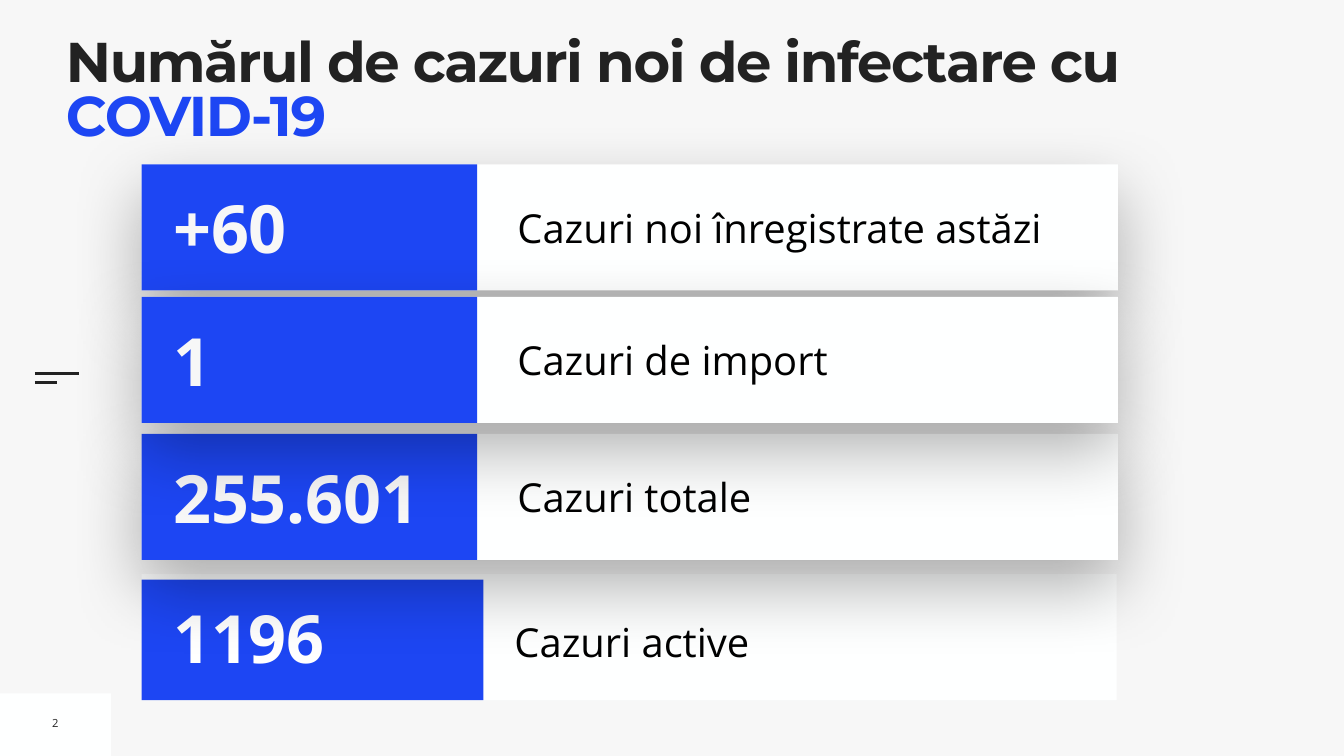
from lxml import etree
from pptx import Presentation
from pptx import util as u
from pptx.dml.color import RGBColor
from pptx.enum import shapes, text
from pptx.oxml import ns

INK = RGBColor(0x22, 0x22, 0x22)
BLACK = RGBColor(0, 0, 0)
BLUE = RGBColor(0x1D, 0x46, 0xF3)
PAPER = RGBColor(0xF7, 0xF7, 0xF7)
CARD = RGBColor(0xFE, 0xFF, 0xFF)
WHITE = RGBColor(0xFF, 0xFF, 0xFF)

LEFT = 10.54
TALL = 16.67


def write(frame, runs, size, font="Open Sans", bold=False, inset=0.1,
          align=None, anchor=text.MSO_ANCHOR.MIDDLE, lead=None,
          before=None, track=None, wrap=True):
    frame.word_wrap = wrap
    frame.vertical_anchor = anchor
    frame.margin_left = frame.margin_right = u.Inches(inset)
    frame.margin_top = frame.margin_bottom = u.Inches(inset)
    para = frame.paragraphs[0]
    para.alignment = align
    para.line_spacing = lead
    para.space_before = before
    for words, color in runs:
        run = para.add_run()
        run.text = words
        run.font.name = font
        run.font.size = u.Pt(size)
        run.font.bold = bold
        run.font.color.rgb = color
        if track:
            run.font._element.set("spc", str(track * 100))


class Deck:
    def __init__(self):
        self.file = Presentation()
        self.file.slide_width = u.Inches(26.67)
        self.file.slide_height = u.Inches(15)
        self.slide = self.file.slides.add_slide(self.file.slide_layouts[6])
        self.slide.background.fill.solid()
        self.slide.background.fill.fore_color.rgb = PAPER
        self.home = self.slide.shapes

    def across(self, share):
        return round(self.file.slide_width * share / 100)

    def down(self, share):
        return round(self.file.slide_height * share / 100)

    def area(self, x, y, wide, high):
        return self.across(x), self.down(y), self.across(wide), self.down(high)

    def box(self, x, y, wide, high, color, shade=False):
        item = self.home.add_shape(shapes.MSO_SHAPE.RECTANGLE,
                                   *self.area(x, y, wide, high))
        item.shadow.inherit = False
        item.fill.solid()
        item.fill.fore_color.rgb = color
        item.line.fill.background()
        if shade:
            self.shade(item)

    def shade(self, item):
        effects = item._element.spPr.find(ns.qn("a:effectLst"))
        cast = etree.SubElement(effects, ns.qn("a:outerShdw"),
                                blurRad=str(u.Pt(100)), dist=str(u.Pt(40)),
                                dir="5400000", algn="t", rotWithShape="0")
        tint = etree.SubElement(cast, ns.qn("a:srgbClr"), val=str(BLACK))
        etree.SubElement(tint, ns.qn("a:alpha"), val="30000")

    def text(self, x, y, wide, high, runs, size, **style):
        item = self.home.add_textbox(*self.area(x, y, wide, high))
        write(item.text_frame, runs, size, **style)

    def rule(self, x, y, wide):
        line = self.home.add_connector(
            shapes.MSO_CONNECTOR.STRAIGHT, self.across(x), self.down(y),
            self.across(x + wide), self.down(y))
        line.line.color.rgb = INK
        line.line.width = u.Pt(3)
        etree.SubElement(line._element.spPr, ns.qn("a:effectLst"))

    def card(self, y, count, label, color=PAPER, shade=True, wide=72.63,
             blue=24.97, drop=0, num=2.33, spot=(38.13, 4.47, 44.1, 7.73),
             **style):
        self.home = self.slide.shapes.add_group_shape().shapes
        x, dip, span, high = spot
        self.box(LEFT, y, wide, TALL, CARD, shade)
        self.text(x, y + dip, span, high, [(label, BLACK)], 57, **style)
        self.box(LEFT, y + drop, blue, TALL - drop, BLUE)
        self.text(12.52, y + num, 22.61, 12, [(count, color)], 95, bold=True)
        self.home = self.slide.shapes


def main():
    deck = Deck()
    deck.box(0, 91.73, 8.25, 8.27, CARD)
    deck.rule(2.59, 49.4, 3.3)
    deck.rule(2.59, 50.6, 1.65)
    deck.text(3.49, 93.93, 1.27, 3.4, [("2", INK)], 16,
              align=text.PP_ALIGN.CENTER, wrap=False)
    deck.text(4.91, 5.2, 89.76, 10.53,
              [("Numărul de cazuri noi de infectare cu ", INK),
               ("COVID-19", BLUE)], 80, font="Montserrat", bold=True,
              inset=0, anchor=text.MSO_ANCHOR.TOP, lead=0.8, track=-2)
    deck.card(75.93, "1196", "Cazuri active", color=WHITE, shade=False,
              wide=72.55, blue=25.42, drop=0.74, num=2.33,
              spot=(38.28, 3.87, 43.42, 8.33), inset=0, lead=1.3,
              before=u.Pt(20))
    for y, count, label in (
            (21.73, "+60", "Cazuri noi înregistrate astăzi"),
            (57.4, "255.601", "Cazuri totale"),
            (39.27, "1", "Cazuri de import")):
        deck.card(y, count, label)
    deck.file.save("out.pptx")


if __name__ == "__main__":
    main()
